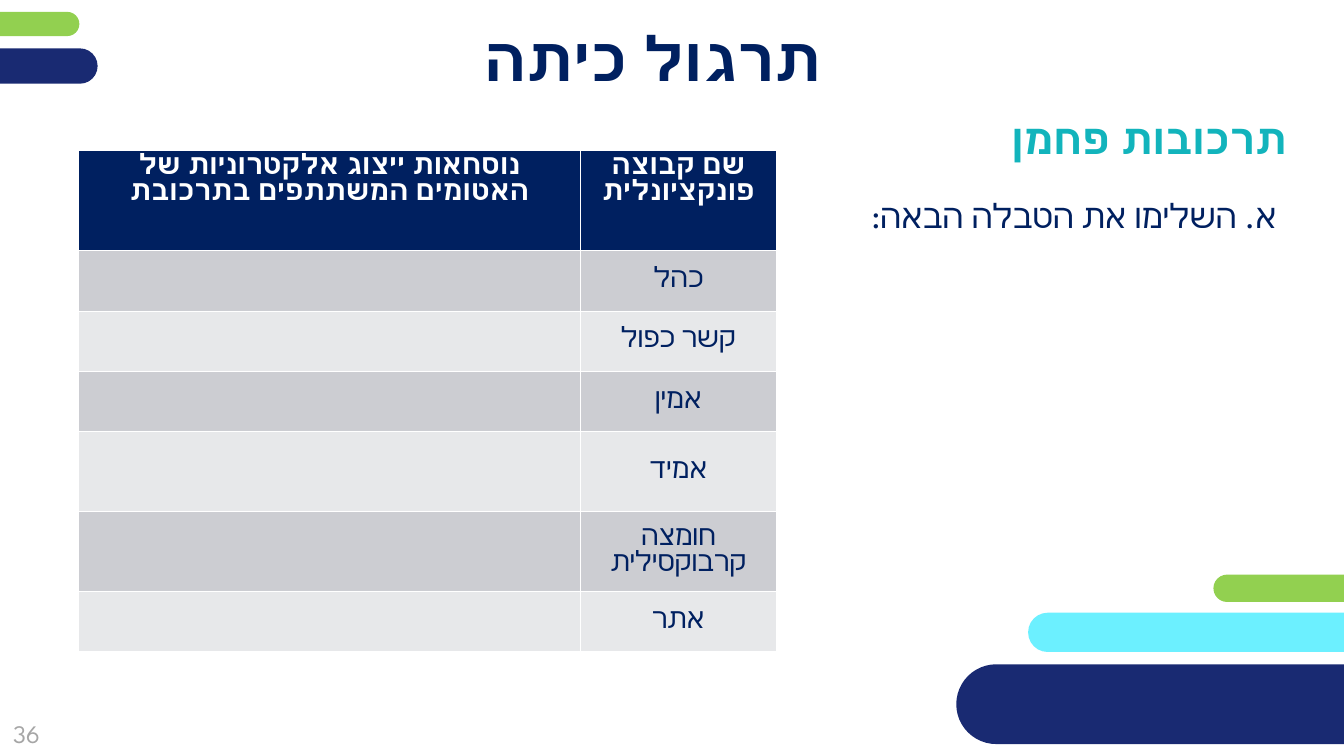
from dataclasses import dataclass
from pptx import Presentation
from pptx.dml.color import RGBColor
from pptx.enum.shapes import MSO_SHAPE
from pptx.enum.text import MSO_ANCHOR, MSO_AUTO_SIZE, PP_ALIGN
from pptx.oxml.ns import qn
from pptx.util import Cm, Pt
from lxml.etree import SubElement


@dataclass(frozen=True)
class Theme:
    font: str = "League Spartan"
    ink: str = "002060"
    navy: str = "192A72"
    green: str = "92D050"
    aqua: str = "6CF0FF"
    teal: str = "12B4BC"
    grey: str = "A6A6A6"
    white: str = "FFFFFF"
    bands: tuple = ("CCCDD2", "E7E8EA")
    title: int = 44
    head: int = 30
    body: int = 24
    cell: int = 20
    page: int = 18


T = Theme()
HEADS = ("נוסחאות ייצוג אלקטרוניות של האטומים המשתתפים בתרכובת",
         "שם קבוצה פונקציונלית")
# Group name and row height
GROUPS = (("כהל", 1.52), ("קשר כפול", 1.52), ("אמין", 1.52),
          ("אמיד", 2.01), ("חומצה קרבוקסילית", 2.01), ("אתר", 1.52))


def write(frame, text, size, color=T.ink, bold=False, align=PP_ALIGN.CENTER,
          anchor=MSO_ANCHOR.MIDDLE, rtl=True, after=0):
    """Put one formatted paragraph in a text frame."""
    frame.word_wrap = True
    frame.vertical_anchor = anchor
    para = frame.paragraphs[0]
    para.alignment = align
    para.space_before, para.space_after = Pt(0), Pt(after)
    props = para._p.get_or_add_pPr()
    props.set("marL", "0")
    props.set("indent", "0")
    if rtl:
        props.set("rtl", "1")
    SubElement(props, qn("a:buNone"))
    run = para.add_run()
    run.text = text
    font = run.font
    font.name, font.size, font.bold = T.font, Pt(size), bold
    font.color.rgb = RGBColor.from_string(color)
    SubElement(run._r.get_or_add_rPr(), qn("a:cs"), typeface=T.font)


def paint(item, color):
    item.fill.solid()
    item.fill.fore_color.rgb = RGBColor.from_string(color)


def place(holder, box, inset=True):
    """Move a placeholder to its box and return its text frame."""
    holder.left, holder.top, holder.width, holder.height = map(Cm, box)
    frame = holder.text_frame
    frame.auto_size = MSO_AUTO_SIZE.NONE
    if not inset:
        frame.margin_left = frame.margin_right = 0
        frame.margin_top = frame.margin_bottom = 0
    return frame


def draw_bars(slide, box, bars):
    """Draw pill bars, each offset from the corner of the box."""
    left, top = box
    for x, y, wide, high, color in bars:
        bar = slide.shapes.add_shape(MSO_SHAPE.ROUNDED_RECTANGLE, Cm(left + x),
                                     Cm(top + y), Cm(wide), Cm(high))
        bar.adjustments[0] = 0.5
        bar.shadow.inherit = False
        bar.line.fill.background()
        paint(bar, color)


def draw_page(slide, box, number):
    note = slide.shapes.add_textbox(*map(Cm, box))
    write(note.text_frame, number, T.page, color=T.grey, rtl=False)


def draw_text(slide, box):
    """Fill the title, the heading and the task line."""
    left, top, wide = box
    title, task, head = slide.placeholders
    write(place(title, (left + 1.42, top, 27.23, 2.01), inset=False),
          "תרגול כיתה", T.title, bold=True)
    write(place(head, (left, top + 2.41, wide, 1.27), inset=False),
          "תרכובות פחמן", T.head, color=T.teal, bold=True,
          align=PP_ALIGN.RIGHT)
    write(place(task, (left, top + 4.35, wide, 10.69)),
          "א. השלימו את הטבלה הבאה:", T.body, align=PP_ALIGN.RIGHT,
          anchor=MSO_ANCHOR.TOP, after=6)


def draw_table(slide, box):
    """Draw the table of groups, with the answer column left empty."""
    left, top, wide = box
    highs = [2.54] + [high for _, high in GROUPS]
    grid = slide.shapes.add_table(len(highs), 2, Cm(left), Cm(top),
                                  Cm(wide), Cm(sum(highs))).table
    name = 4.93
    grid.columns[0].width = Cm(wide - name)
    grid.columns[1].width = Cm(name)
    for row, high in zip(grid.rows, highs):
        row.height = Cm(high)
    # Header
    for cell, text in zip(grid.rows[0].cells, HEADS):
        paint(cell, T.ink)
        write(cell.text_frame, text, T.cell, color=T.white, bold=True,
              anchor=MSO_ANCHOR.TOP)
    # Rows
    for i, (text, _) in enumerate(GROUPS):
        blank, cell = grid.rows[i + 1].cells
        paint(blank, T.bands[i % 2])
        paint(cell, T.bands[i % 2])
        write(cell.text_frame, text, T.cell)
        cell.vertical_anchor = MSO_ANCHOR.MIDDLE


def main():
    deck = Presentation()
    deck.slide_width, deck.slide_height = Cm(33.87), Cm(19.05)
    slide = deck.slides.add_slide(deck.slide_layouts[3])
    # Corner bars
    draw_bars(slide, (-4.8, 0.3), [(0.96, 0, 5.84, 0.61, T.green),
                                   (0, 0.92, 7.26, 0.89, T.navy)])
    draw_bars(slide, (24.1, 14.48), [(1.81, 0.96, 13.23, 0.99, T.aqua),
                                     (0, 2.26, 11.46, 2.01, T.navy),
                                     (6.48, 0, 6.58, 0.69, T.green)])
    # Content
    draw_page(slide, (-0.46, 17.75, 2.26, 1.45), "36")
    draw_text(slide, (1.42, 0.43, 31.01))
    draw_table(slide, (1.98, 3.78, 17.58))
    deck.save("out.pptx")


if __name__ == "__main__":
    main()
